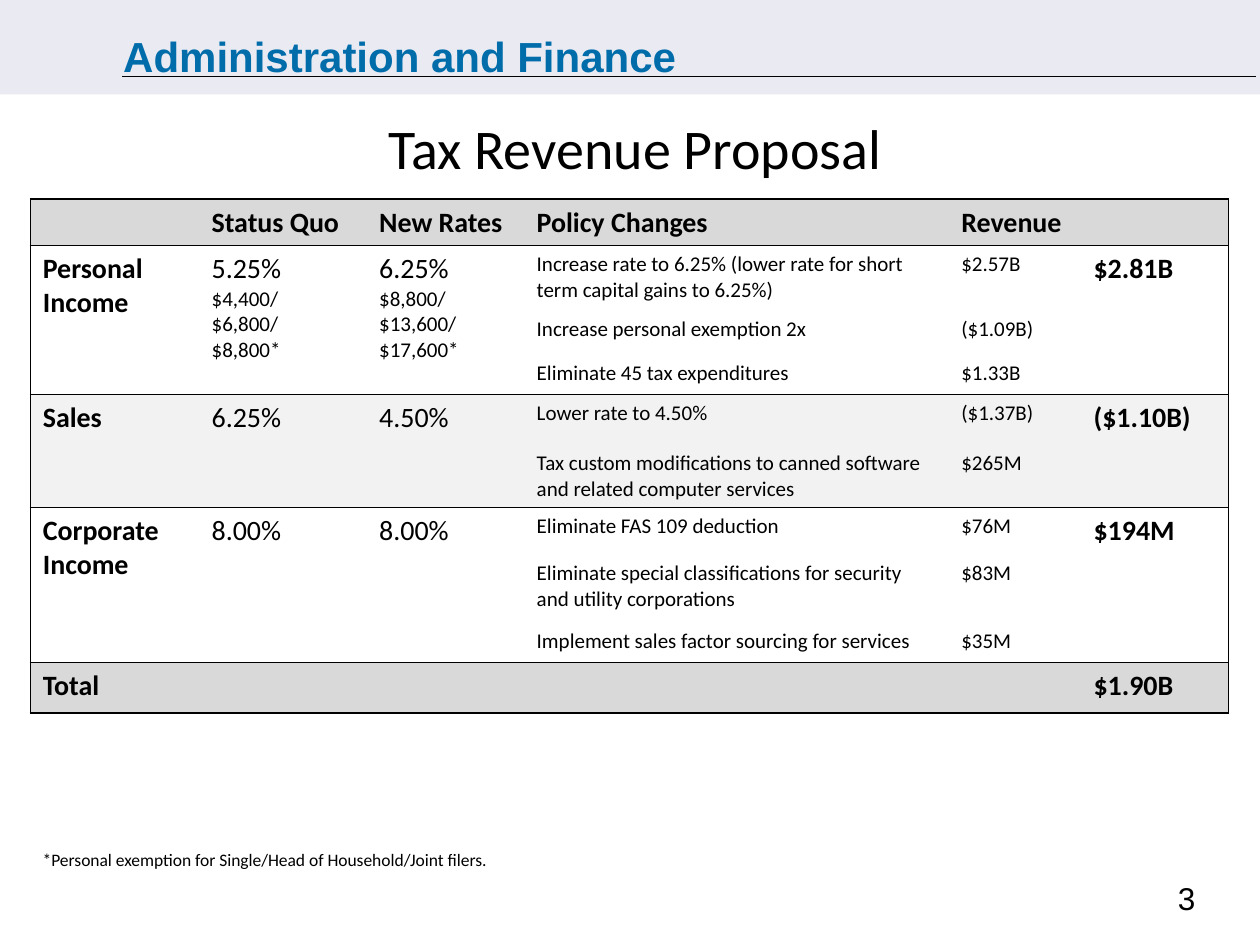
import pptx
from pptx.dml.color import RGBColor
from pptx.enum.shapes import MSO_CONNECTOR, MSO_SHAPE
from pptx.enum.text import MSO_ANCHOR, PP_ALIGN
from pptx.oxml.ns import qn
from pptx.util import Inches, Pt
from lxml import etree

BLACK = RGBColor(0x00, 0x00, 0x00)
WHITE = RGBColor(0xFF, 0xFF, 0xFF)
BLUE = RGBColor(0x00, 0x6D, 0xAA)
LAVENDER = RGBColor(0xEA, 0xEA, 0xF2)
GRAY = RGBColor(0xD9, 0xD9, 0xD9)
PALE_GRAY = RGBColor(0xF2, 0xF2, 0xF2)

HEADINGS = ["", "Status Quo", "New Rates", "Policy Changes", "Revenue"]
TAXES = [
    {
        "name": "Personal Income", "total": "$2.81B", "fill": WHITE, "merged": True,
        "rates": [
            ["5.25%", "$4,400/", "$6,800/", "$8,800*"],
            ["6.25%", "$8,800/", "$13,600/", "$17,600*"],
        ],
        "changes": [
            ("Increase rate to 6.25% (lower rate for short term capital gains to 6.25%)", "$2.57B"),
            ("Increase personal exemption 2x", "($1.09B)"),
            ("Eliminate 45 tax expenditures", "$1.33B"),
        ],
    },
    {
        "name": "Sales", "total": "($1.10B)", "fill": PALE_GRAY, "merged": False,
        "rates": [["6.25%"], ["4.50%"]],
        "changes": [
            ("Lower rate to 4.50%", "($1.37B)"),
            ("Tax custom modifications to canned software and related computer services", "$265M"),
        ],
    },
    {
        "name": "Corporate Income", "total": "$194M", "fill": WHITE, "merged": True,
        "rates": [["8.00%"], ["8.00%"]],
        "changes": [
            ("Eliminate FAS 109 deduction", "$76M"),
            ("Eliminate special classifications for security and utility corporations", "$83M"),
            ("Implement sales factor sourcing for services", "$35M"),
        ],
    },
]
GRAND_TOTAL = ("Total", "$1.90B")
COLUMN_WIDTHS = [1.34, 1.33, 1.25, 3.37, 1.05, 1.17]
ROW_HEIGHTS = [0.37, 0.51, 0.35, 0.32, 0.4, 0.5, 0.37, 0.54, 0.32, 0.4]
LAST_COLUMN = len(COLUMN_WIDTHS) - 1


def add_span(para, text, size, color=BLACK, bold=False, font="Calibri"):
    span = para.add_run()
    span.text = text
    span.font.name = font
    span.font.size = Pt(size)
    span.font.bold = bold
    span.font.color.rgb = color


def add_text(page, place, text, size, color=BLACK, bold=False, font="Calibri",
             align=PP_ALIGN.LEFT, anchor=MSO_ANCHOR.TOP):
    box = page.shapes.add_textbox(*map(Inches, place))
    box.text_frame.word_wrap = True
    box.text_frame.vertical_anchor = anchor
    para = box.text_frame.paragraphs[0]
    para.alignment = align
    add_span(para, text, size, color, bold, font)


def write_cell(cell, lines, size=16, bold=False):
    for index, line in enumerate(lines):
        frame = cell.text_frame
        para = frame.paragraphs[0] if index == 0 else frame.add_paragraph()
        add_span(para, line, size if index == 0 else 12, bold=bold)


def set_borders(cell, sides):
    properties = cell._tc.get_or_add_tcPr()
    for position, side in enumerate("LRTB"):
        line = etree.Element(qn(f"a:ln{side}"), w=str(Pt(1)))
        if side in sides:
            fill = etree.SubElement(line, qn("a:solidFill"))
            etree.SubElement(fill, qn("a:srgbClr"), val=str(BLACK))
        else:
            etree.SubElement(line, qn("a:noFill"))
        properties.insert(position, line)


def style_group(table, first, last, color):
    for row in range(first, last + 1):
        for column in range(LAST_COLUMN + 1):
            cell = table.cell(row, column)
            cell.fill.solid()
            cell.fill.fore_color.rgb = color
            end_row = row + (cell.span_height if cell.is_merge_origin else 1) - 1
            end_column = column + (cell.span_width if cell.is_merge_origin else 1) - 1
            sides = [("L", column == 0), ("R", end_column == LAST_COLUMN),
                     ("T", row == first), ("B", end_row == last)]
            set_borders(cell, [side for side, shown in sides if shown])
            if not cell.text:
                para = cell.text_frame.paragraphs[0]
                etree.SubElement(para._p, qn("a:endParaRPr"), sz="1200")


def add_tax_table(page):
    frame = page.shapes.add_table(
        len(ROW_HEIGHTS), len(COLUMN_WIDTHS), Inches(0.24), Inches(1.58),
        Inches(sum(COLUMN_WIDTHS)), Inches(sum(ROW_HEIGHTS)))
    table = frame.table
    table.horz_banding = False
    table.first_row = False
    for column, width in zip(table.columns, COLUMN_WIDTHS):
        column.width = Inches(width)
    for row, height in zip(table.rows, ROW_HEIGHTS):
        row.height = Inches(height)

    for column, heading in enumerate(HEADINGS):
        if heading:
            write_cell(table.cell(0, column), [heading], bold=True)
    table.cell(0, LAST_COLUMN - 1).merge(table.cell(0, LAST_COLUMN))
    style_group(table, 0, 0, GRAY)

    first = 1
    for tax in TAXES:
        last = first + len(tax["changes"]) - 1
        write_cell(table.cell(first, 0), [tax["name"]], bold=True)
        write_cell(table.cell(first, LAST_COLUMN), [tax["total"]], bold=True)
        for column, lines in enumerate(tax["rates"], start=1):
            write_cell(table.cell(first, column), lines)
        for row, (change, revenue) in enumerate(tax["changes"], start=first):
            write_cell(table.cell(row, 3), [change], size=12)
            write_cell(table.cell(row, 4), [revenue], size=12)
        if tax["merged"]:
            for column in (0, 1, 2, LAST_COLUMN):
                table.cell(first, column).merge(table.cell(last, column))
        style_group(table, first, last, tax["fill"])
        first = last + 1

    for column, text in zip((0, LAST_COLUMN), GRAND_TOTAL):
        write_cell(table.cell(first, column), [text], bold=True)
    style_group(table, first, first, GRAY)


def add_banner(page):
    banner = page.shapes.add_shape(
        MSO_SHAPE.RECTANGLE, 0, 0, Inches(10), Inches(0.75))
    banner.shadow.inherit = False
    banner.fill.solid()
    banner.fill.fore_color.rgb = LAVENDER
    banner.line.fill.background()
    add_text(page, (0.88, 0.19, 8.67, 0.5), "Administration and Finance", 24,
             BLUE, bold=True, font="Arial")
    rule = page.shapes.add_connector(
        MSO_CONNECTOR.STRAIGHT, Inches(0.97), Inches(0.61), Inches(9.97), Inches(0.61))
    rule.line.color.rgb = BLACK
    rule.line.width = Pt(0.75)
    etree.SubElement(rule._element.spPr, qn("a:effectLst"))


def main():
    deck = pptx.Presentation()
    deck.slide_width = Inches(10)
    deck.slide_height = Inches(7.5)
    page = deck.slides.add_slide(deck.slide_layouts[6])
    add_banner(page)
    add_text(page, (9.25, 6.93, 0.58, 0.4), "3", 18, font="Arial")
    add_text(page, (0.24, 6.69, 4.02, 0.27),
             "*Personal exemption for Single/Head of Household/Joint filers.", 10)
    add_text(page, (0.79, 0.92, 8.5, 0.5), "Tax Revenue Proposal", 32,
             align=PP_ALIGN.CENTER, anchor=MSO_ANCHOR.MIDDLE)
    add_tax_table(page)
    deck.save("out.pptx")


if __name__ == "__main__":
    main()
